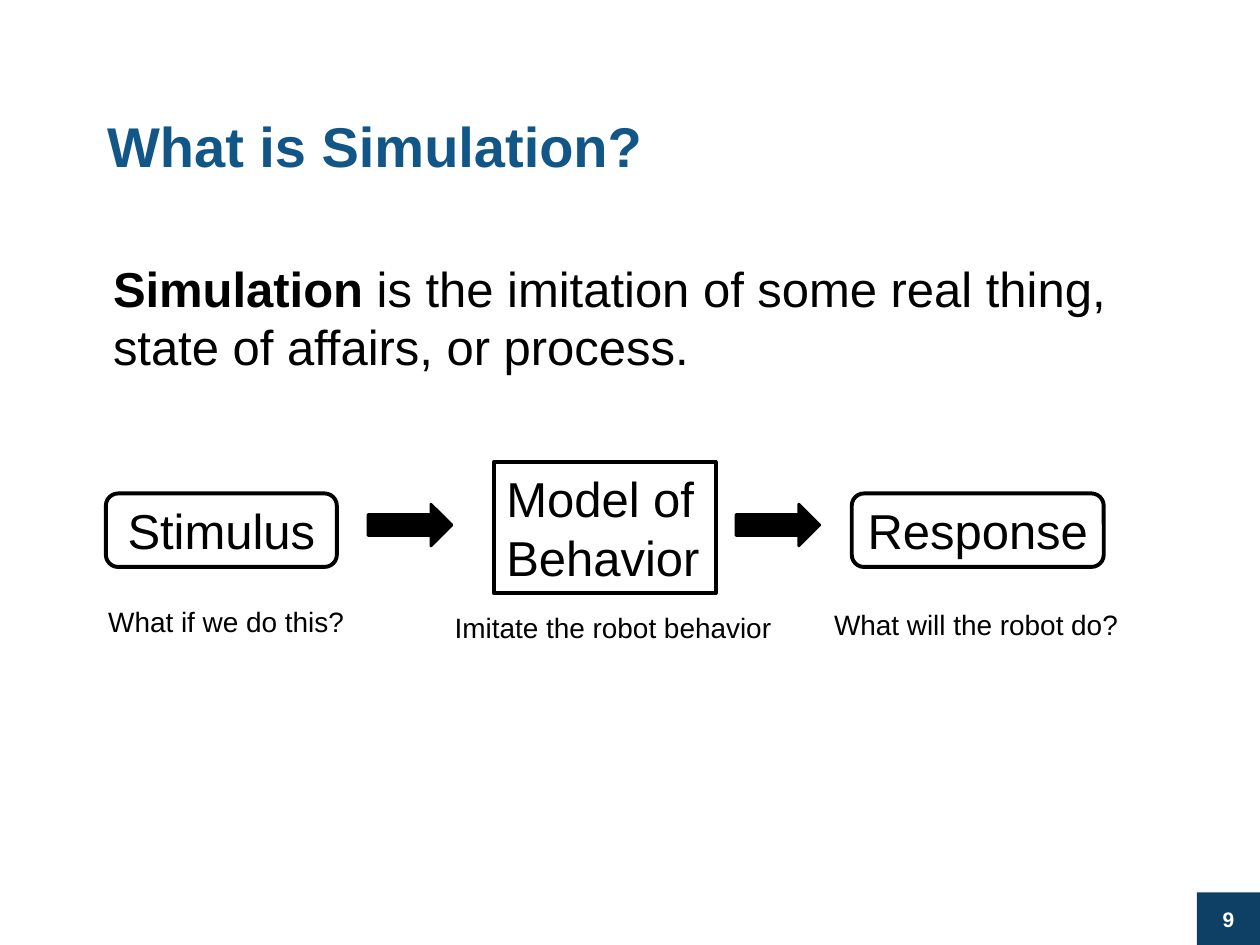
import dataclasses

import pptx
import pptx.dml.color
import pptx.enum.shapes
import pptx.enum.text
import pptx.util

Pt = pptx.util.Pt
Color = pptx.dml.color.RGBColor
Shape = pptx.enum.shapes.MSO_SHAPE
Align = pptx.enum.text.PP_ALIGN
Anchor = pptx.enum.text.MSO_ANCHOR


@dataclasses.dataclass(frozen=True)
class Theme:
    """Colours, font and type sizes of the slide."""
    font: str = "Arial"
    title_color: Color = Color(0x12, 0x56, 0x87)
    badge_color: Color = Color(0x0E, 0x40, 0x65)
    ink: Color = Color(0, 0, 0)
    paper: Color = Color(255, 255, 255)
    title_size: int = 32
    body_size: int = 28
    caption_size: int = 16
    badge_size: int = 12


THEME = Theme()


def style_text(shape, size, color, bold=False, align=Align.LEFT, anchor=Anchor.TOP, wrap=True):
    """Format every paragraph and run of a shape."""
    frame = shape.text_frame
    frame.word_wrap = wrap
    frame.auto_size = pptx.enum.text.MSO_AUTO_SIZE.NONE
    frame.vertical_anchor = anchor
    for paragraph in frame.paragraphs:
        paragraph.alignment = align
        for run in paragraph.runs:
            run.font.name = THEME.font
            run.font.size = Pt(size)
            run.font.color.rgb = color
            run.font.bold = bold


def add_shape(slide, kind, box, fill=None, line_width=None):
    """Add a preset shape with an optional fill and outline."""
    shape = slide.shapes.add_shape(kind, *map(Pt, box))
    shape.shadow.inherit = False
    if fill is None:
        shape.fill.background()
    else:
        shape.fill.solid()
        shape.fill.fore_color.rgb = fill
    if line_width is None:
        shape.line.fill.background()
    else:
        shape.line.color.rgb = THEME.ink
        shape.line.width = Pt(line_width)
    return shape


def place_title(slide, box, text):
    """Move and format the title placeholder."""
    title = slide.shapes.title
    title.left, title.top, title.width, title.height = map(Pt, box)
    title.text_frame.text = text
    style_text(title, THEME.title_size, THEME.title_color, bold=True)


def add_definition(slide, box, term, meaning):
    """Add a definition that opens with its term in bold."""
    definition = slide.shapes.add_textbox(*map(Pt, box))
    paragraph = definition.text_frame.paragraphs[0]
    for text in (term, meaning):
        paragraph.add_run().text = text
    style_text(definition, THEME.body_size, THEME.ink)
    paragraph.runs[0].font.bold = True


def add_stage(slide, kind, box, text, align):
    """Add one outlined stage of the flow."""
    stage = add_shape(slide, kind, box, line_width=2.25)
    stage.text_frame.text = text
    style_text(stage, THEME.body_size, THEME.ink, align=align, anchor=Anchor.MIDDLE, wrap=False)


def add_caption(slide, box, text):
    """Add a one-line caption."""
    caption = slide.shapes.add_textbox(*map(Pt, box))
    caption.text_frame.text = text
    style_text(caption, THEME.caption_size, THEME.ink, wrap=False)


def add_flow(slide, box):
    """Add the stages, arrows and captions inside the given box."""
    left, top, width, height = box
    rounded, square = Shape.ROUNDED_RECTANGLE, Shape.RECTANGLE
    stages = [
        (rounded, 0, 18, 132, 42, "Stimulus", Align.CENTER),
        (square, 221.75, 0, 126.75, 75, "Model of\nBehavior", Align.LEFT),
        (rounded, width - 144, 18, 144, 42, "Response", Align.CENTER),
    ]
    for kind, x, y, stage_width, stage_height, text, align in stages:
        add_stage(slide, kind, (left + x, top + y, stage_width, stage_height), text, align)
    for x in (149.75, 360):
        add_shape(slide, Shape.RIGHT_ARROW, (left + x, top + 24, 48, 24), THEME.ink, 1.5)
    captions = [
        (-5.75, 78, 151, "What if we do this?"),
        (192.25, 81.5, 198, "Imitate the robot behavior"),
        (409, 79.5, 178.5, "What will the robot do?"),
    ]
    for x, y, caption_width, text in captions:
        add_caption(slide, (left + x, top + y, caption_width, 26.5), text)


def add_page_number(slide, box, number):
    """Add the page number on its corner badge."""
    badge = add_shape(slide, Shape.RECTANGLE, box, THEME.badge_color)
    badge.text_frame.text = str(number)
    style_text(badge, THEME.badge_size, THEME.paper, bold=True,
               align=Align.CENTER, anchor=Anchor.MIDDLE)


def main():
    """Build and save the slide."""
    presentation = pptx.Presentation()
    presentation.slide_width, presentation.slide_height = Pt(720), Pt(540)
    slide = presentation.slides.add_slide(presentation.slide_layouts.get_by_name("Title Only"))
    add_page_number(slide, (684, 510, 36, 30), 9)
    place_title(slide, (54, 60, 528, 60), "What is Simulation?")
    add_definition(slide, (57.5, 144, 602.5, 75), "Simulation",
                   " is the imitation of some real thing, state of affairs, or process.")
    add_flow(slide, (60.5, 264, 570.25, 108))
    presentation.save("out.pptx")


if __name__ == "__main__":
    main()
